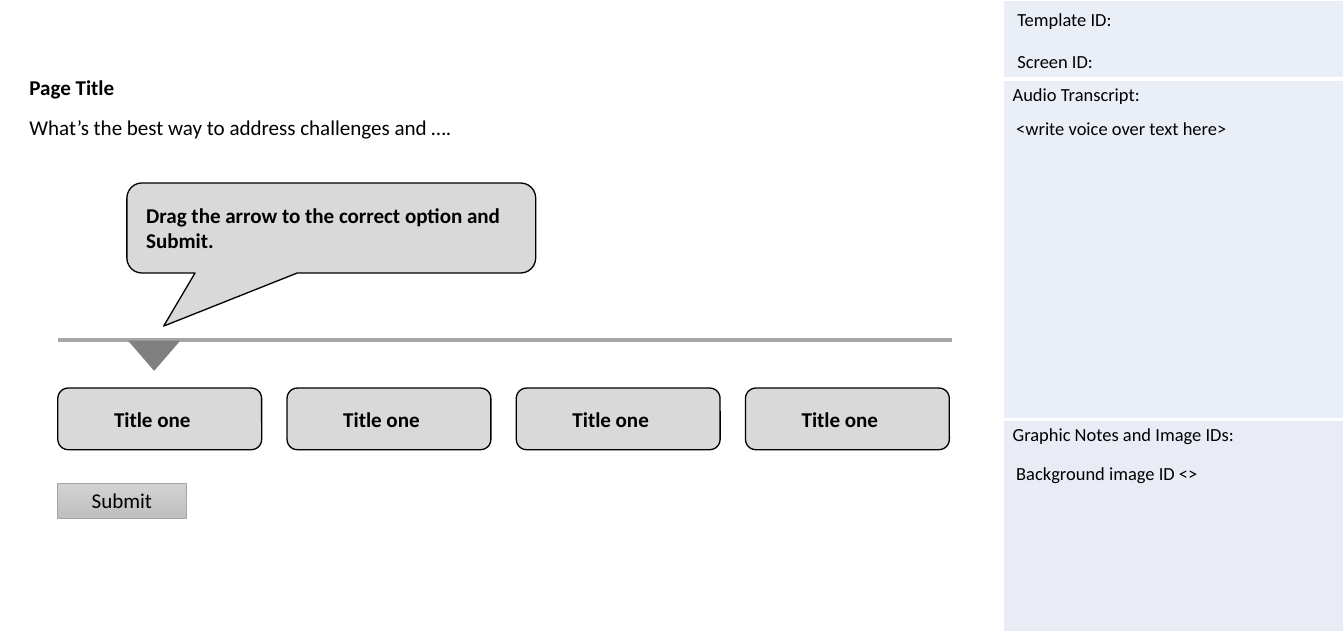
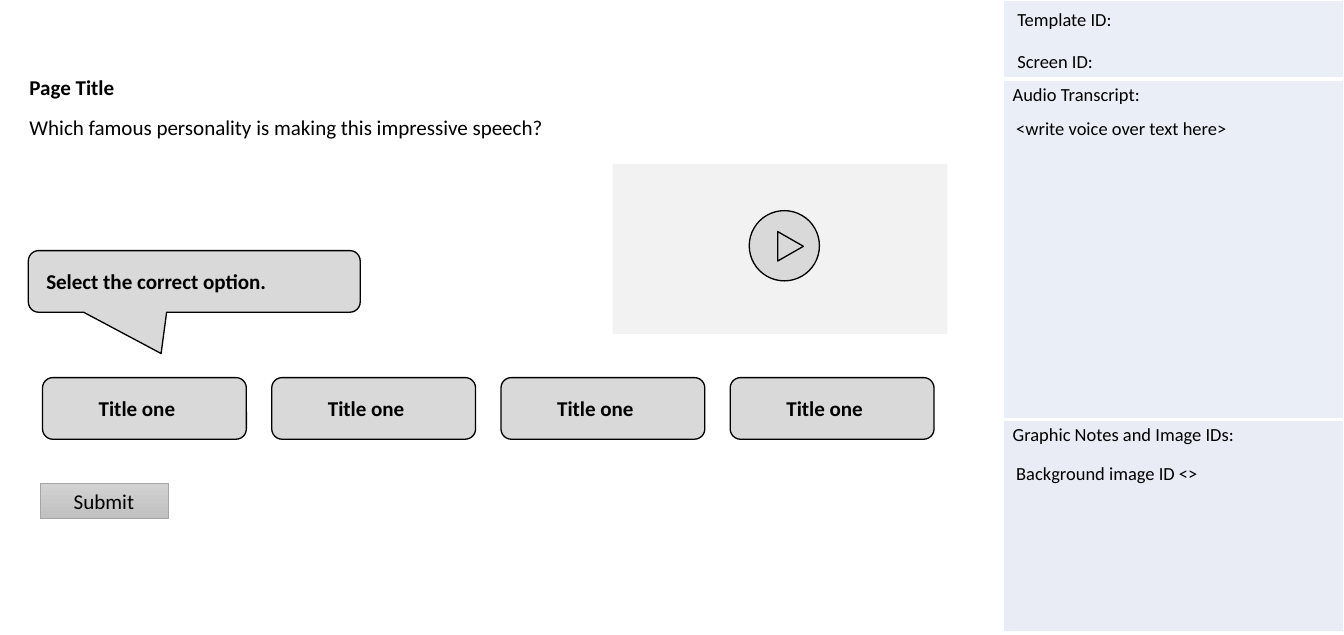
from dataclasses import dataclass

from lxml import etree
from pptx import Presentation
from pptx import util as u
from pptx.dml import color
from pptx.enum import shapes, text
from pptx.oxml import ns

FONT = "Calibri"
COLORS = {
    "text": "000000",
    "white": "FFFFFF",
    "panel": "EAEFF7",
    "panel_dark": "E9EBF5",
    "box": "D9D9D9",
    "outline": "000000",
    "track": "A6A6A6",
    "marker": "808080",
    "video": "F2F2F2",
    "button_top": "D2D2D2",
    "button_bottom": "C0C0C0",
    "button_line": "A5A5A5",
}
LEFT, CENTER = text.PP_ALIGN.LEFT, text.PP_ALIGN.CENTER
SHAPE = shapes.MSO_SHAPE


@dataclass(frozen=True)
class Box:
    """A place on the slide, in centimetres."""
    left: float
    top: float
    width: float
    height: float

    def lengths(self):
        return tuple(u.Cm(n) for n in (self.left, self.top, self.width, self.height))


@dataclass(frozen=True)
class Section:
    heading: str
    height: float
    fill: str


@dataclass(frozen=True)
class Note:
    wording: str
    left: float
    top: float


@dataclass(frozen=True)
class Callout:
    wording: str
    box: Box
    tip: tuple[float, float]


@dataclass(frozen=True)
class Screen:
    question: str
    callout: Callout
    options_left: float
    options_top: float
    submit_left: float
    submit_top: float


TITLE_BOX = Box(0.79, 2, 16.28, 0.97)
QUESTION_BOX = Box(0.79, 3.07, 24.64, 1.2)
PANEL_LEFT, PANEL_WIDTH = 26.87, 9.12
SECTIONS = (
    Section("", 2.11, "panel"),
    Section("Audio Transcript:", 9.12, "panel"),
    Section("Graphic Notes and Image IDs:", 5.67, "panel_dark"),
)
NOTES = (
    Note("Screen ID:", 27, 1.22),
    Note("Template ID:", 27, 0.1),
    Note("<write voice over text here>", 26.97, 3.02),
    Note("Background image ID <>", 26.97, 12.24),
)
OPTIONS = ("Title one",) * 4
OPTION_WIDTH, OPTION_HEIGHT, OPTION_GAP = 5.46, 1.65, 0.68

SLIDER_SCREEN = Screen(
    "What’s the best way to address challenges and ….",
    Callout("Drag the arrow to the correct option and Submit.",
            Box(3.4, 4.9, 10.95, 2.41), (-0.41, 1.09)),
    1.55, 10.39, 1.55, 12.93)
VIDEO_SCREEN = Screen(
    "Which famous personality is making this impressive speech?",
    Callout("Select the correct option.", Box(0.76, 6.71, 8.89, 1.65), (-0.1, 1.17)),
    1.14, 10.11, 1.07, 12.95)


def rgb(name: str) -> color.RGBColor:
    return color.RGBColor.from_string(COLORS[name])


def write(frame, wording: str, size: int, bold: bool = False, align=LEFT) -> None:
    frame.text = wording
    for paragraph in frame.paragraphs:
        paragraph.alignment = align
        for run in paragraph.runs:
            run.font.name, run.font.size = FONT, u.Pt(size)
            run.font.bold = bold
            run.font.color.rgb = rgb("text")


def set_frame(frame, margins: tuple[float, float, float, float], anchor) -> None:
    """Set wrapping, anchor and the left, top, right and bottom margins."""
    frame.word_wrap = True
    frame.auto_size = text.MSO_AUTO_SIZE.NONE
    frame.vertical_anchor = anchor
    (frame.margin_left, frame.margin_top,
     frame.margin_right, frame.margin_bottom) = (u.Cm(n) for n in margins)


def add_shape(parent, kind, box: Box, fill: str, outlined: bool = False):
    shape = parent.add_shape(kind, *box.lengths())
    shape.shadow.inherit = False
    shape.fill.solid()
    shape.fill.fore_color.rgb = rgb(fill)
    if outlined:
        shape.line.color.rgb = rgb("outline")
        shape.line.width = u.Pt(1)
    else:
        shape.line.fill.background()
    return shape


def add_label_box(slide, kind, box: Box, wording: str, align):
    shape = add_shape(slide.shapes, kind, box, "box", outlined=True)
    set_frame(shape.text_frame, (0.4, 0.4, 0.8, 0.4), text.MSO_ANCHOR.TOP)
    write(shape.text_frame, wording, 16, True, align)
    return shape


def set_border(cell, side: str, width: float) -> None:
    line = etree.SubElement(cell._tc.get_or_add_tcPr(), ns.qn(f"a:{side}"),
                            w=str(u.Pt(width)))
    fill = etree.SubElement(line, ns.qn("a:solidFill"))
    etree.SubElement(fill, ns.qn("a:srgbClr"), val=COLORS["white"])


def add_panel(slide) -> None:
    box = Box(PANEL_LEFT, 0, PANEL_WIDTH, sum(s.height for s in SECTIONS))
    table = slide.shapes.add_table(len(SECTIONS), 1, *box.lengths()).table
    table.first_row = table.horz_banding = False
    set_border(table.cell(0, 0), "lnB", 3)
    set_border(table.cell(1, 0), "lnT", 3)
    for index, section in enumerate(SECTIONS):
        table.rows[index].height = u.Cm(section.height)
        cell = table.cell(index, 0)
        cell.fill.solid()
        cell.fill.fore_color.rgb = rgb(section.fill)
        if section.heading:
            write(cell.text_frame, section.heading, 14)
    for note in NOTES:
        note_box = Box(note.left, note.top, 9, 0.86)
        frame = slide.shapes.add_textbox(*note_box.lengths()).text_frame
        frame.word_wrap = True
        write(frame, note.wording, 14)


def add_heading(slide, question: str) -> None:
    title, body = slide.shapes.title, slide.placeholders[1]
    for placeholder, wording, bold in ((title, "Page Title", True), (body, question, False)):
        set_frame(placeholder.text_frame, (0, 0, 0, 0), text.MSO_ANCHOR.TOP)
        write(placeholder.text_frame, wording, 16, bold)
    paragraph = body.text_frame.paragraphs[0]
    paragraph.space_before = u.Pt(0)
    properties = paragraph._p.get_or_add_pPr()
    properties.set("marL", "0")
    properties.set("indent", "0")
    etree.SubElement(properties, ns.qn("a:buNone"))


def add_submit(slide, left: float, top: float) -> None:
    button = add_shape(slide.shapes, SHAPE.RECTANGLE, Box(left, top, 3.43, 0.94), "box")
    button.fill.gradient()
    button.fill.gradient_angle = 270
    for stop, name in zip(button.fill.gradient_stops, ("button_top", "button_bottom")):
        stop.color.rgb = rgb(name)
    for stop, position in zip(button.fill.gradient_stops, (0, 1)):
        stop.position = position
    button.line.color.rgb = rgb("button_line")
    button.line.width = u.Pt(0.5)
    set_frame(button.text_frame, (0, 0.13, 0, 0.13), text.MSO_ANCHOR.MIDDLE)
    write(button.text_frame, "Submit", 16, align=CENTER)


def add_screen(presentation, layout, screen: Screen):
    """Add a slide with all the parts that every screen has."""
    slide = presentation.slides.add_slide(layout)
    add_heading(slide, screen.question)
    add_panel(slide)
    callout = add_label_box(slide, SHAPE.ROUNDED_RECTANGULAR_CALLOUT,
                            screen.callout.box, screen.callout.wording, LEFT)
    callout.adjustments[0], callout.adjustments[1] = screen.callout.tip
    for index, option in enumerate(OPTIONS):
        left = screen.options_left + index * (OPTION_WIDTH + OPTION_GAP)
        box = Box(left, screen.options_top, OPTION_WIDTH, OPTION_HEIGHT)
        add_label_box(slide, SHAPE.ROUNDED_RECTANGLE, box, option, CENTER)
    add_submit(slide, screen.submit_left, screen.submit_top)
    return slide


def add_slider(slide) -> None:
    track = slide.shapes.add_connector(shapes.MSO_CONNECTOR.STRAIGHT, u.Cm(1.55),
                                       u.Cm(9.1), u.Cm(25.5), u.Cm(9.1))
    track.line.color.rgb = rgb("track")
    track.line.width = u.Pt(3)
    etree.SubElement(track._element.spPr, ns.qn("a:effectLst"))
    add_shape(slide.shapes, SHAPE.FLOWCHART_MERGE, Box(3.43, 9.12, 1.4, 0.81), "marker")


def add_video(slide) -> None:
    group = slide.shapes.add_group_shape().shapes
    add_shape(group, SHAPE.RECTANGLE, Box(16.41, 4.39, 8.97, 4.55), "video")
    add_shape(group, SHAPE.OVAL, Box(20.07, 5.64, 1.88, 1.88), "box", outlined=True)
    play = add_shape(group, SHAPE.ISOSCELES_TRIANGLE, Box(20.78, 6.25, 0.79, 0.69),
                     "box", outlined=True)
    play.rotation = 90


def main() -> None:
    presentation = Presentation()
    presentation.slide_width, presentation.slide_height = u.Cm(36), u.Cm(17)
    layout = presentation.slide_layouts[1]
    for placeholder, box in zip(layout.placeholders, (TITLE_BOX, QUESTION_BOX)):
        (placeholder.left, placeholder.top,
         placeholder.width, placeholder.height) = box.lengths()
    add_slider(add_screen(presentation, layout, SLIDER_SCREEN))
    add_video(add_screen(presentation, layout, VIDEO_SCREEN))
    presentation.save("out.pptx")


if __name__ == "__main__":
    main()
